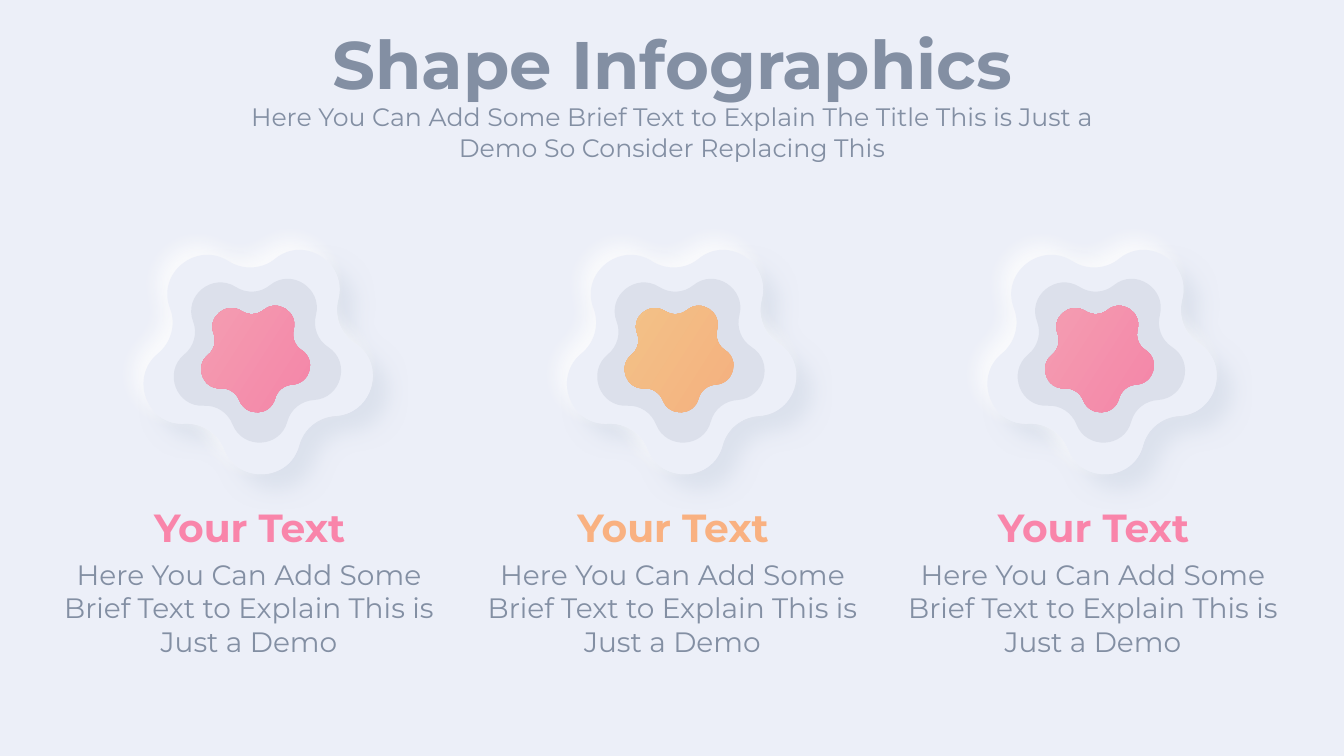
"""Builds the Shape Infographics slide with three layered rounded stars."""
from dataclasses import dataclass
from math import cos, radians, sin

from lxml.etree import SubElement
from pptx import Presentation
from pptx.dml.color import RGBColor
from pptx.enum.text import MSO_ANCHOR, MSO_AUTO_SIZE, PP_ALIGN
from pptx.oxml.ns import qn
from pptx.util import Inches, Pt


@dataclass(frozen=True)
class Theme:
    font: str = "Montserrat"
    background: str = "ECEFF8"
    ring: str = "DCE0EB"
    text: str = "838FA3"
    dark_shadow: str = "D1D9E6"
    light_shadow: str = "FFFFFF"
    pink: tuple = ("FF598A", "FF8A9C")
    orange: tuple = ("FF974F", "FEBD61")
    gradient_opacity: int = 70
    title_size: int = 48
    subtitle_size: int = 18
    heading_size: int = 28
    body_size: int = 20


LOBE = ((0.83, -0.52), (0.78, -0.36), (0.84, -0.18), (0.98, -0.08),
        (1.28, 0.14), (1.13, 0.63), (0.75, 0.63))
LOBE_START, LOBE_CONTROLS = (0.75, -0.63), (
    (1.13, -0.63), (1.28, -0.14), (0.98, 0.08), (0.84, 0.18), (0.78, 0.36))
STAR_ROTATION = 32.6
STAR_SIZE = (2.27, 2.23)
STAR_CENTER = (1.18, 1.07)


def turned(point, angle):
    x, y = point
    return x * cos(angle) - y * sin(angle), x * sin(angle) + y * cos(angle)


def star_controls(scale):
    points = [LOBE_START]
    for turn in range(5):
        points += [turned(point, radians(72 * turn)) for point in LOBE_CONTROLS]
        points.append(turned(LOBE_START, radians(72 * (turn + 1))))
    return [tuple(Inches(scale * (value + center)) for value, center in zip(point, STAR_CENTER))
            for point in points]


def curve_segments(shape, points, width, height):
    path = next(shape._element.iter(qn("a:path")))
    path.set("w", str(width))
    path.set("h", str(height))
    for element, (x, y) in zip(path.iter(qn("a:pt")), points):
        element.set("x", str(x))
        element.set("y", str(y))
    lines = path.findall(qn("a:lnTo"))
    for first in range(0, len(lines), 3):
        curve = SubElement(path, qn("a:cubicBezTo"))
        lines[first].addprevious(curve)
        for line in lines[first:first + 3]:
            curve.append(line[0])
            path.remove(line)


def add_alpha(color, percent):
    SubElement(color, qn("a:alpha"), val=str(percent * 1000))


def apply_fill(fill, color, opacity):
    if isinstance(color, str):
        fill.solid()
        fill.fore_color.rgb = RGBColor.from_string(color)
        return
    fill.gradient()
    fill.gradient_angle = 180
    for stop, value in zip(fill.gradient_stops, color):
        stop.color.rgb = RGBColor.from_string(value)
    for element in fill._xPr.iter(qn("a:srgbClr")):
        add_alpha(element, opacity)


def write_text(shape, text, *, theme, size, color, bold=False):
    frame = shape.text_frame
    frame.word_wrap = True
    frame.auto_size = MSO_AUTO_SIZE.SHAPE_TO_FIT_TEXT
    frame.vertical_anchor = MSO_ANCHOR.TOP
    paragraph = frame.paragraphs[0]
    paragraph.alignment = PP_ALIGN.CENTER
    run = paragraph.add_run()
    run.text = text
    run.font.name = theme.font
    run.font.size = Pt(size)
    run.font.bold = bold
    apply_fill(run.font.fill, color, theme.gradient_opacity)


class SlideBuilder:
    def __init__(self, presentation, theme):
        self.theme = theme
        self.slide = presentation.slides.add_slide(presentation.slide_layouts[5])
        apply_fill(self.slide.background.fill, theme.background, 100)

    def title(self, text, left, top, width, height):
        shape = self.slide.shapes.title
        shape.left, shape.top = Inches(left), Inches(top)
        shape.width, shape.height = Inches(width), Inches(height)
        write_text(shape, text, theme=self.theme, size=self.theme.title_size,
                   color=self.theme.text, bold=True)

    def text(self, text, left, top, width, height, **style):
        shape = self.slide.shapes.add_textbox(
            Inches(left), Inches(top), Inches(width), Inches(height))
        write_text(shape, text, theme=self.theme, **style)

    def star(self, left, top, scale, color):
        points = star_controls(scale)
        builder = self.slide.shapes.build_freeform(*points[0])
        builder.add_line_segments(points[1:], close=True)
        shape = builder.convert_to_shape()
        shape.left, shape.top = Inches(left), Inches(top)
        shape.width, shape.height = (Inches(scale * side) for side in STAR_SIZE)
        curve_segments(shape, points, shape.width, shape.height)
        shape.rotation = STAR_ROTATION
        shape.shadow.inherit = False
        shape.line.fill.background()
        apply_fill(shape.fill, color, self.theme.gradient_opacity)
        return shape

    def shadowed_star(self, left, top, color, opacity, blur, distance, direction):
        shape = self.star(left, top, 1, self.theme.background)
        effects = shape._element.spPr.find(qn("a:effectLst"))
        outer = SubElement(effects, qn("a:outerShdw"), blurRad=str(Pt(blur)),
                           dist=str(Pt(distance)), dir=str(direction * 60000),
                           algn="ctr", rotWithShape="0")
        add_alpha(SubElement(outer, qn("a:srgbClr"), val=color), opacity)
        return shape

    def layered_star(self, left, accent):
        theme = self.theme
        shadows = ((theme.dark_shadow, 60, 15, 15, 45),
                   (theme.light_shadow, 80, 15, 10, 225))
        self.slide.shapes.add_group_shape(
            [self.shadowed_star(left, 2.43, *shadow) for shadow in shadows])
        self.star(left + 0.32, 2.73, 0.73, theme.ring)
        self.star(left + 0.61, 3.01, 0.475, accent)

    def column(self, left, accent):
        theme = self.theme
        self.layered_star(left + 1.05, accent)
        self.text("Your Text", left, 4.94, 4.35, 0.57,
                  size=theme.heading_size, color=accent, bold=True)
        self.text("Here You Can Add Some Brief Text to Explain This is Just a Demo",
                  left, 5.48, 4.34, 1.11, size=theme.body_size, color=theme.text)


def main():
    theme = Theme()
    presentation = Presentation()
    presentation.slide_width = Inches(13.33)
    presentation.slide_height = Inches(7.5)
    builder = SlideBuilder(presentation, theme)
    builder.title("Shape Infographics", 2.78, 0.17, 7.78, 0.91)
    builder.text("Here You Can Add Some Brief Text to Explain The Title This is Just a "
                 "Demo So Consider Replacing This", 2.3, 0.96, 8.73, 0.71,
                 size=theme.subtitle_size, color=theme.text)
    for left, accent in ((0.3, theme.pink), (4.5, theme.orange), (8.67, theme.pink)):
        builder.column(left, accent)
    presentation.save("out.pptx")


if __name__ == "__main__":
    main()
